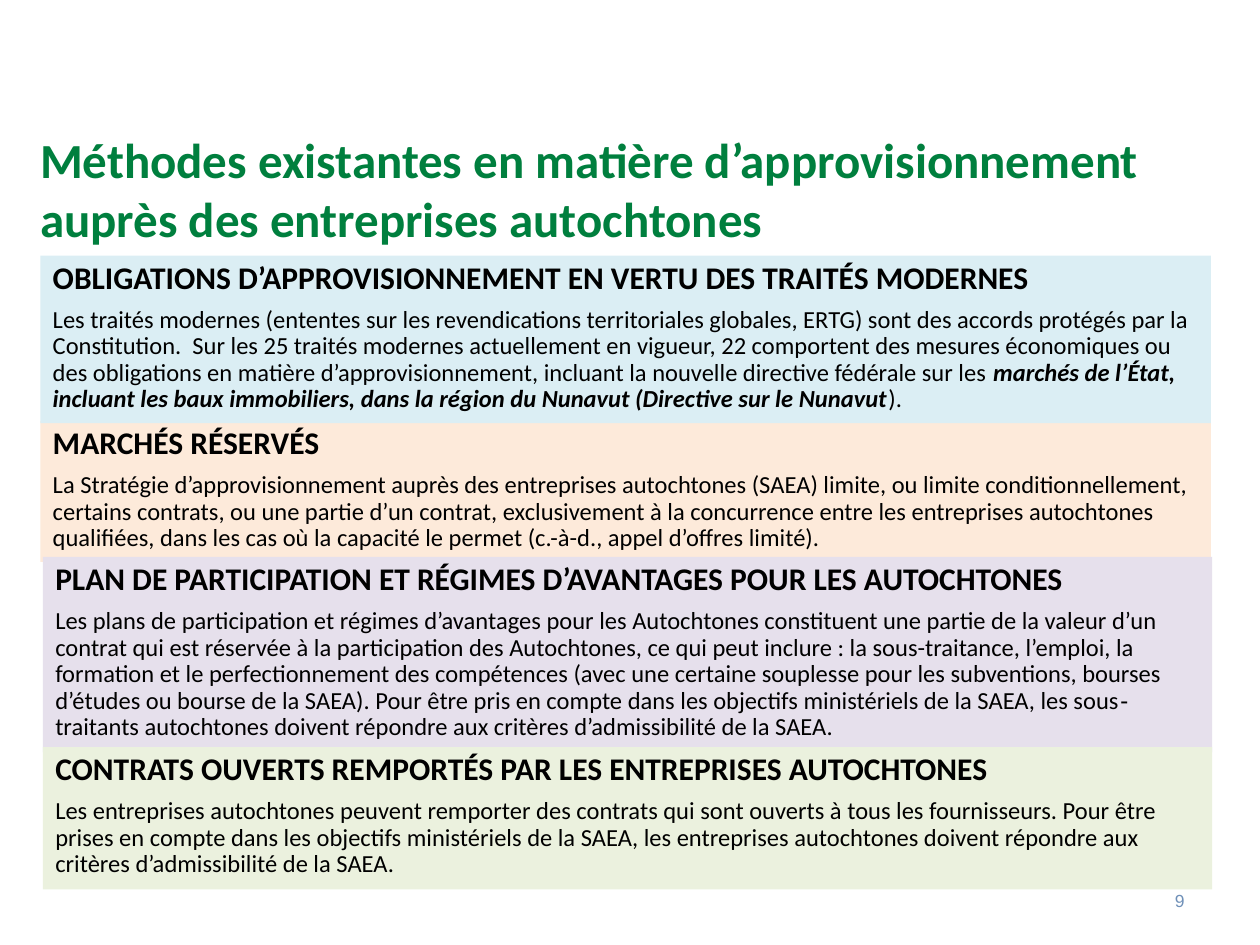
from pptx import Presentation
from pptx.dml.color import RGBColor
from pptx.enum.shapes import MSO_SHAPE
from pptx.enum.text import MSO_ANCHOR, PP_ALIGN
from pptx.util import Inches, Pt

RECT = MSO_SHAPE.RECTANGLE
TOP, MIDDLE, BOTTOM = MSO_ANCHOR.TOP, MSO_ANCHOR.MIDDLE, MSO_ANCHOR.BOTTOM
LEFT, RIGHT = PP_ALIGN.LEFT, PP_ALIGN.RIGHT


def rgb(value):
    return RGBColor.from_string(value)


def add_text(p, text, size=14, font="Calibri", color="000000", bold=False,
             italic=False, align=LEFT):
    p.alignment = align
    r = p.add_run()
    r.text = text
    r.font.size = Pt(size)
    r.font.name = font
    r.font.color.rgb = rgb(color)
    r.font.bold = bold
    r.font.italic = italic


prs = Presentation()
prs.slide_width, prs.slide_height = Inches(10), Inches(7.5)
s = prs.slides.add_slide(prs.slide_layouts[6])

sections = [
    (0.32, 3.34, 9.29, 1.12, "FDEADA", "MARCHÉS RÉSERVÉS", [
        ("La Stratégie d’approvisionnement auprès des entreprises autochtones (SAEA) limite, "
         "ou limite conditionnellement, certains contrats, ou une partie d’un contrat, "
         "exclusivement à la concurrence entre les entreprises autochtones qualifiées, dans "
         "les cas où la capacité le permet (c.-à-d., appel d’offres limité).", False)]),
    (0.32, 2.03, 9.29, 1.33, "DBEEF4",
     "OBLIGATIONS D’APPROVISIONNEMENT EN VERTU DES TRAITÉS MODERNES", [
        ("Les traités modernes (ententes sur les revendications territoriales globales, ERTG) "
         "sont des accords protégés par la Constitution.  Sur les 25 traités modernes "
         "actuellement en vigueur, 22 comportent des mesures économiques ou des obligations "
         "en matière d’approvisionnement, incluant la nouvelle directive fédérale sur les ",
         False),
        ("marchés de l’État, incluant les baux immobiliers, dans la région du Nunavut "
         "(Directive sur le Nunavut", True),
        (").", False)]),
    (0.34, 4.42, 9.28, 1.55, "E6E0EC",
     "PLAN DE PARTICIPATION ET RÉGIMES D’AVANTAGES POUR LES AUTOCHTONES", [
        ("Les plans de participation et régimes d’avantages pour les Autochtones constituent "
         "une partie de la valeur d’un contrat qui est réservée à la participation des "
         "Autochtones, ce qui peut inclure : la sous-traitance, l’emploi, la formation et le "
         "perfectionnement des compétences (avec une certaine souplesse pour les subventions, "
         "bourses d’études ou bourse de la SAEA). Pour être pris en compte dans les objectifs "
         "ministériels de la SAEA, les sous‐traitants autochtones doivent répondre aux "
         "critères d’admissibilité de la SAEA.", False)]),
    (0.34, 5.93, 9.28, 1.13, "EBF1DE",
     "CONTRATS OUVERTS REMPORTÉS PAR LES ENTREPRISES AUTOCHTONES", [
        ("Les entreprises autochtones peuvent remporter des contrats qui sont ouverts à tous "
         "les fournisseurs. Pour être prises en compte dans les objectifs ministériels de la "
         "SAEA, les entreprises autochtones doivent répondre aux critères d’admissibilité de "
         "la SAEA.", False)]),
]

for left, top, width, height, fill, heading, body in sections:
    sp = s.shapes.add_shape(RECT, Inches(left), Inches(top), Inches(width), Inches(height))
    sp.shadow.inherit = False
    sp.fill.solid()
    sp.fill.fore_color.rgb = rgb(fill)
    sp.line.fill.background()
    tf = sp.text_frame
    tf.word_wrap = True
    tf.vertical_anchor = TOP
    p = tf.paragraphs[0]
    p.line_spacing = 0.9
    p.space_after = Pt(6.5)
    add_text(p, heading, size=18, bold=True)
    p = tf.add_paragraph()
    p.line_spacing = 0.9
    for text, strong in body:
        add_text(p, text, bold=strong, italic=strong)

labels = [
    (7.17, 6.95, 2.33, 0.4, MIDDLE, "9",
     dict(size=10, font="Arial", color="6F90B8", align=RIGHT)),
    (0.22, 1.47, 9.29, 0.54, BOTTOM,
     "Méthodes existantes en matière d’approvisionnement auprès des entreprises autochtones",
     dict(size=28, color="007F3E", bold=True)),
]

for left, top, width, height, anchor, text, style in labels:
    sp = s.shapes.add_textbox(Inches(left), Inches(top), Inches(width), Inches(height))
    tf = sp.text_frame
    tf.word_wrap = True
    tf.vertical_anchor = anchor
    add_text(tf.paragraphs[0], text, **style)

prs.save("out.pptx")
